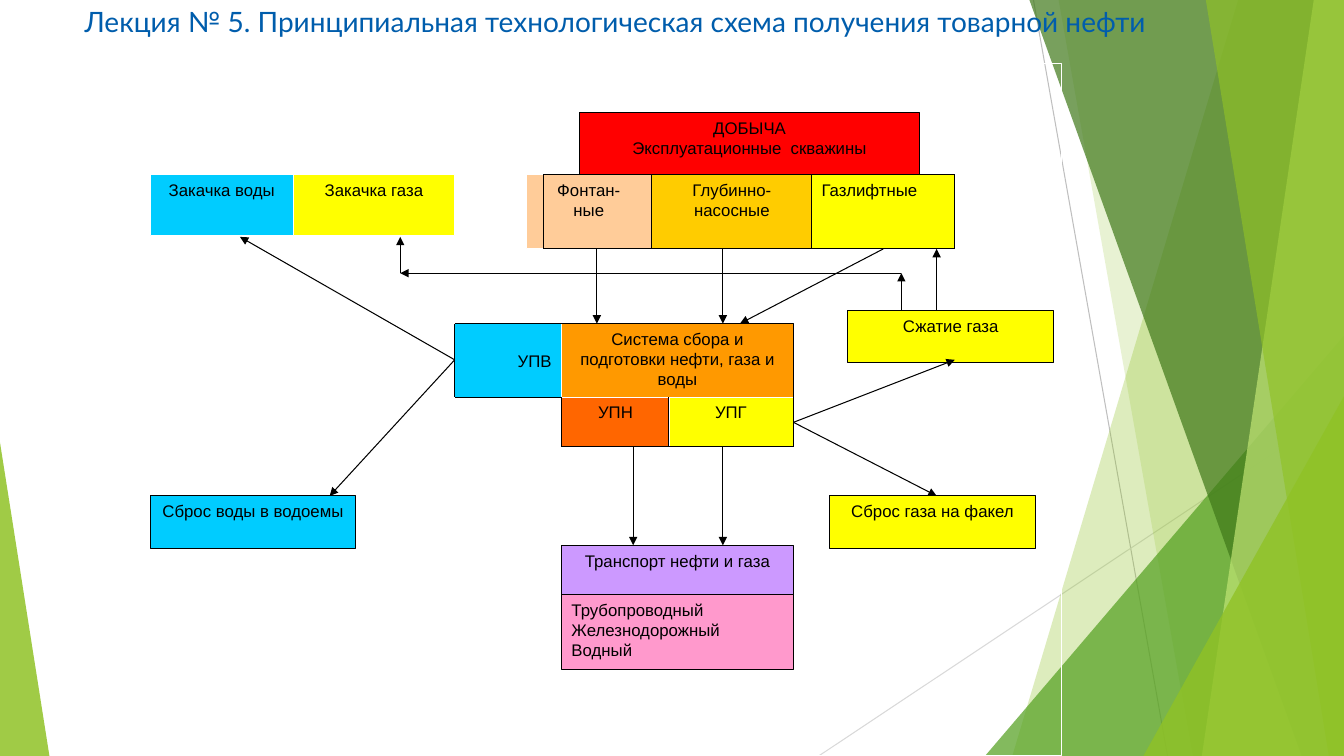
from dataclasses import dataclass

import lxml.etree
import pptx
import pptx.dml.color
import pptx.enum.shapes
import pptx.enum.text
import pptx.oxml
import pptx.oxml.ns
import pptx.util

Inches = pptx.util.Inches
Pt = pptx.util.Pt
RGBColor = pptx.dml.color.RGBColor
Align = pptx.enum.text.PP_ALIGN
Anchor = pptx.enum.text.MSO_ANCHOR
Preset = pptx.enum.shapes.MSO_SHAPE
qn = pptx.oxml.ns.qn

BLACK = RGBColor(0x00, 0x00, 0x00)
WHITE = RGBColor(0xFF, 0xFF, 0xFF)
TITLE_BLUE = RGBColor(0x00, 0x5D, 0xAC)
WATER = RGBColor(0x00, 0xCC, 0xFF)
GAS = RGBColor(0xFF, 0xFF, 0x00)
RED = RGBColor(0xFF, 0x00, 0x00)
PEACH = RGBColor(0xFF, 0xCC, 0x99)
AMBER = RGBColor(0xFF, 0xCC, 0x00)
ORANGE = RGBColor(0xFF, 0x99, 0x00)
DARK_ORANGE = RGBColor(0xFF, 0x66, 0x00)
VIOLET = RGBColor(0xCC, 0x99, 0xFF)
PINK = RGBColor(0xFF, 0x99, 0xCC)
LIME = RGBColor(0x90, 0xC2, 0x26)
GREEN = RGBColor(0x54, 0xA0, 0x21)
DARK_GREEN = RGBColor(0x3F, 0x78, 0x19)
PALE_LIME = RGBColor(0xC0, 0xE4, 0x74)
GREY = RGBColor(0xBF, 0xBF, 0xBF)
LIGHT_GREY = RGBColor(0xD9, 0xD9, 0xD9)

WIDTH, HEIGHT = 13.33, 7.5
LINE_WIDTH = Pt(0.75)


@dataclass
class Band:
    top_x: float
    bottom_right: float
    bottom_left: float
    color: RGBColor
    opacity: int


@dataclass
class Triangle:
    left: float
    top: float
    width: float
    apex: float
    color: RGBColor
    opacity: int


@dataclass
class Block:
    text: str
    left: float
    top: float
    width: float
    height: float
    fill: RGBColor
    border: RGBColor = BLACK
    align: Align = Align.CENTER
    anchor: Anchor = Anchor.TOP


@dataclass
class Segment:
    x1: float
    y1: float
    x2: float
    y2: float


DECOR = [
    Band(12.28, WIDTH, 10.04, LIME, 30),
    Band(10.5, WIDTH, 11.83, LIME, 20),
    Triangle(9.77, 3.33, 3.56, 1, GREEN, 72),
    Band(10.21, WIDTH, 12.91, DARK_GREEN, 70),
    Band(13.03, WIDTH, 11.92, PALE_LIME, 70),
    Band(11.96, WIDTH, 13.18, LIME, 65),
    Triangle(11.34, 3.93, 1.99, 1, LIME, 80),
    Triangle(0, 4.39, 0.49, 0, LIME, 85),
]

BLOCKS = [
    Block("Закачка воды", 1.49, 1.73, 1.42, 0.61, WATER, WHITE),
    Block("Фонтан-\nные", 5.22, 1.73, 1.24, 0.74, PEACH, WHITE),
    Block("ДОБЫЧА\nЭксплуатационные  скважины", 5.75, 1.12, 3.37, 0.61, RED),
    Block("Закачка газа", 2.91, 1.73, 1.6, 0.61, GAS, WHITE),
    Block("Глубинно-\nнасосные", 6.46, 1.73, 1.6, 0.74, AMBER, WHITE),
    Block("Газлифтные", 8.05, 1.73, 1.42, 0.74, GAS, WHITE, Align.LEFT),
    Block("Система сбора и подготовки нефти, газа и воды", 5.57, 3.21, 2.3, 0.74, ORANGE),
    Block("Транспорт нефти и газа", 5.57, 5.41, 2.3, 0.49, VIOLET),
    Block("УПГ", 6.63, 3.94, 1.24, 0.49, GAS, WHITE),
    Block("УПВ", 4.51, 3.21, 1.06, 0.74, WATER, WHITE, Align.RIGHT, Anchor.MIDDLE),
    Block("УПН", 5.57, 3.94, 1.07, 0.49, DARK_ORANGE, WHITE),
    Block("Сброс воды в водоемы", 1.49, 4.92, 2.04, 0.52, WATER),
    Block("Сжатие газа", 8.41, 3.08, 2.04, 0.52, GAS),
    Block("Сброс газа на факел", 8.23, 4.92, 2.04, 0.52, GAS),
    Block("Трубопроводный\nЖелезнодорожный\nВодный", 5.57, 5.9, 2.3, 0.74, PINK, BLACK, Align.JUSTIFY),
]

WELL_BORDERS = [Segment(5.39, y, 9.47, y) for y in (1.73, 2.47)] + [
    Segment(x, 1.73, x, 2.47) for x in (5.39, 6.46, 8.05, 9.47)
]
WATER_UNIT_BORDERS = [Segment(5.57, y, 4.51, y) for y in (3.21, 3.94)] + [
    Segment(4.51, 3.21, 4.51, 3.94)
]
OIL_GAS_UNIT_BORDERS = [Segment(x, 3.94, x, 4.43) for x in (5.57, 6.63, 7.87)] + [
    Segment(5.57, 4.43, 7.87, 4.43)
]

ARROWS = [
    Segment(5.92, 2.47, 5.92, 3.21),
    Segment(7.17, 2.47, 7.17, 3.21),
    Segment(8.76, 2.47, 7.34, 3.21),
    Segment(7.87, 4.19, 9.47, 3.57),
    Segment(7.87, 4.19, 9.29, 4.92),
    Segment(4.51, 3.57, 2.38, 2.35),
    Segment(4.51, 3.57, 3.27, 4.92),
    Segment(9.29, 3.08, 9.29, 2.47),
    Segment(8.94, 3.08, 8.94, 2.71),
    Segment(8.94, 2.71, 3.97, 2.71),
    Segment(3.97, 2.71, 3.97, 2.35),
    Segment(6.28, 4.43, 6.28, 5.41),
    Segment(7.17, 4.43, 7.17, 5.41),
]


def draw_segment(page, segment: Segment, color: RGBColor = BLACK, arrow: bool = False) -> None:
    line = page.shapes.add_connector(
        pptx.enum.shapes.MSO_CONNECTOR.STRAIGHT,
        Inches(segment.x1), Inches(segment.y1), Inches(segment.x2), Inches(segment.y2),
    )
    line.line.color.rgb = color
    line.line.width = LINE_WIDTH
    properties = line._element.spPr
    if arrow:
        lxml.etree.SubElement(properties.find(qn("a:ln")), qn("a:tailEnd"), type="triangle")
    lxml.etree.SubElement(properties, qn("a:effectLst"))


def draw_decor(page, decor: Band | Triangle) -> None:
    if isinstance(decor, Band):
        builder = page.shapes.build_freeform(Inches(decor.top_x), 0)
        corners = [(WIDTH, 0), (decor.bottom_right, HEIGHT), (decor.bottom_left, HEIGHT)]
        builder.add_line_segments([(Inches(x), Inches(y)) for x, y in corners])
        shape = builder.convert_to_shape()
    else:
        shape = page.shapes.add_shape(
            Preset.ISOSCELES_TRIANGLE, Inches(decor.left), Inches(decor.top),
            Inches(decor.width), Inches(HEIGHT - decor.top),
        )
        shape.adjustments[0] = decor.apex
    shape.shadow.inherit = False
    shape.line.fill.background()
    shape.fill.solid()
    shape.fill.fore_color.rgb = decor.color
    color = shape._element.spPr.find(qn("a:solidFill"))[0]
    lxml.etree.SubElement(color, qn("a:alpha"), val=str(decor.opacity * 1000))


def write(box, text: str, font: str, size: int, color: RGBColor, align: Align, anchor: Anchor) -> None:
    frame = box.text_frame
    frame.word_wrap = True
    frame.vertical_anchor = anchor
    frame.text = text
    for para in frame.paragraphs:
        para.alignment = align
        para.font.name = font
        para.font.size = Pt(size)
        para.font.color.rgb = color


def draw_block(page, block: Block) -> None:
    box = page.shapes.add_shape(
        Preset.RECTANGLE, Inches(block.left), Inches(block.top), Inches(block.width), Inches(block.height)
    )
    box.shadow.inherit = False
    box.fill.solid()
    box.fill.fore_color.rgb = block.fill
    box.line.color.rgb = block.border
    box.line.width = LINE_WIDTH
    write(box, block.text, "Arial", 12, BLACK, block.align, block.anchor)


def main() -> None:
    deck = pptx.Presentation()
    deck.slide_width, deck.slide_height = Inches(WIDTH), Inches(HEIGHT)
    page = deck.slides.add_slide(deck.slide_layouts[6])
    draw_segment(page, Segment(10.25, 0, 11.58, HEIGHT), GREY)
    draw_segment(page, Segment(WIDTH, 4.03, 8.12, HEIGHT), LIGHT_GREY)
    for decor in DECOR:
        draw_decor(page, decor)
    title = page.shapes.add_textbox(Inches(0.74), 0, Inches(11.81), Inches(0.81))
    write(title, "Лекция № 5. Принципиальная технологическая схема получения товарной нефти",
          "Lato", 20, TITLE_BLUE, Align.LEFT, Anchor.TOP)
    frame = page.shapes.add_shape(Preset.RECTANGLE, Inches(1.49), Inches(0.63), Inches(9.04), Inches(6.87))
    frame.shadow.inherit = False
    frame.fill.background()
    frame.line.color.rgb = WHITE
    frame.line.width = LINE_WIDTH
    for block in BLOCKS:
        draw_block(page, block)
    for border in WELL_BORDERS + WATER_UNIT_BORDERS + OIL_GAS_UNIT_BORDERS:
        draw_segment(page, border)
    for arrow in ARROWS:
        draw_segment(page, arrow, arrow=True)
    deck.save("out.pptx")


if __name__ == "__main__":
    main()
